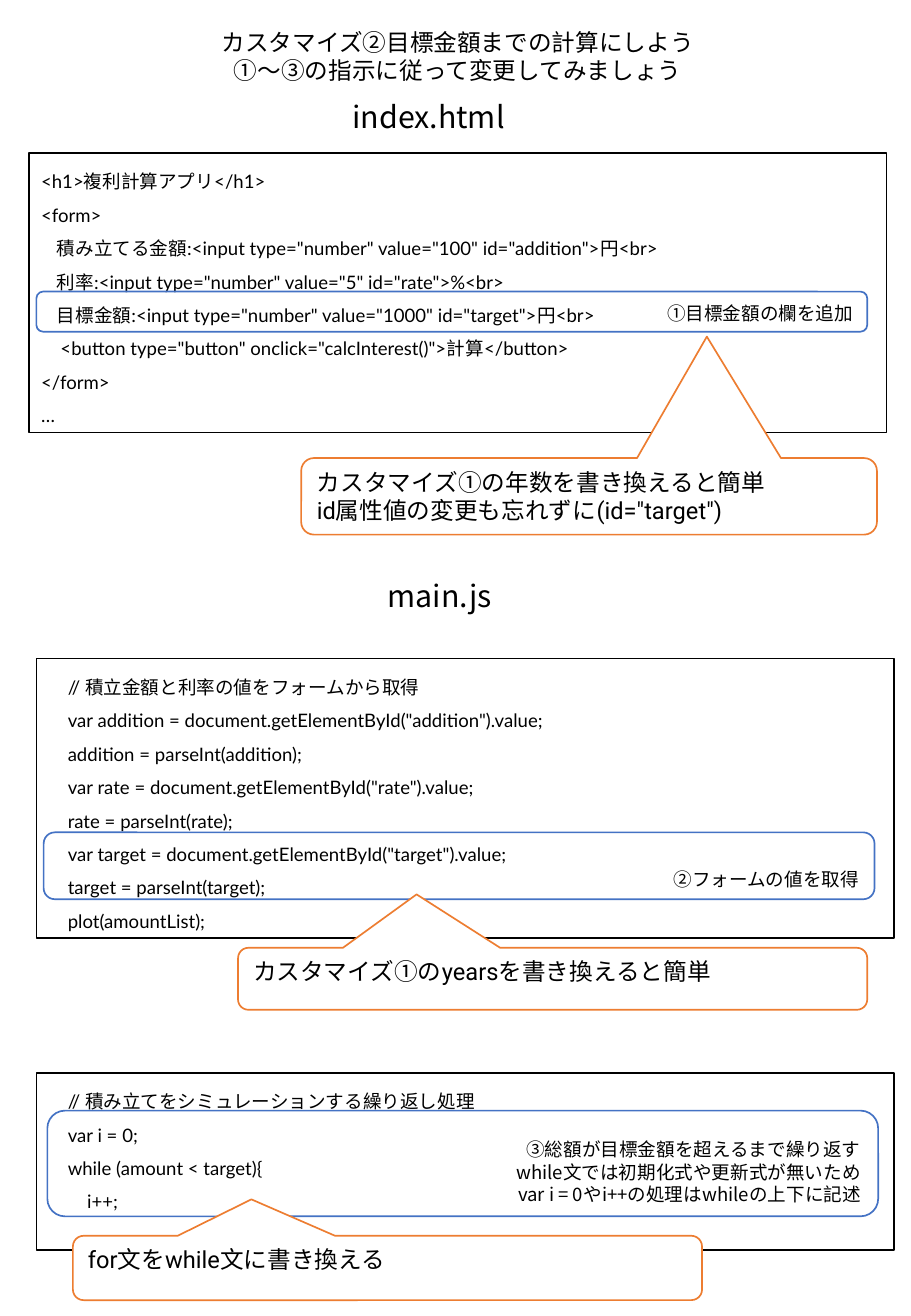
from lxml import etree
from pptx import Presentation
from pptx.dml.color import RGBColor
from pptx.enum.shapes import MSO_SHAPE
from pptx.enum.text import MSO_ANCHOR, MSO_AUTO_SIZE, PP_ALIGN
from pptx.oxml.ns import qn
from pptx.util import Pt

PX = 9144  # EMU per px, 100 px to the inch
PAGE_WIDTH, PAGE_HEIGHT = 750, 1083

BLACK = RGBColor(0x00, 0x00, 0x00)
WHITE = RGBColor(0xFF, 0xFF, 0xFF)
BLUE = RGBColor(0x44, 0x72, 0xC4)
ORANGE = RGBColor(0xED, 0x7D, 0x31)

RECTANGLE = MSO_SHAPE.RECTANGLE
ROUNDED = MSO_SHAPE.ROUNDED_RECTANGLE
CALLOUT = MSO_SHAPE.ROUNDED_RECTANGULAR_CALLOUT
TOP, BOTTOM = MSO_ANCHOR.TOP, MSO_ANCHOR.BOTTOM
LEFT, CENTER, RIGHT = PP_ALIGN.LEFT, PP_ALIGN.CENTER, PP_ALIGN.RIGHT

CODE_FONT, NOTE_FONT, JAPANESE_FONT = "Lato", "Roboto", "Noto Sans CJK JP"

# Content: places are (left, top, width, height) in px
TITLE_PLACE = (24, 18, 706, 88)
TITLE = ["カスタマイズ②目標金額までの計算にしよう", "①～③の指示に従って変更してみましょう"]

HEADINGS = [
    ((0, 76, 706, 40), "index.html"),
    ((9, 470, 706, 40), "main.js"),
]

# Each code line is (indent in px, text)
CODE_PANELS = [
    ((24, 126, 706, 230), [
        (0, "<h1>複利計算アプリ</h1>"),
        (0, "<form>"),
        (13, '積み立てる金額:<input type="number" value="100" id="addition">円<br>'),
        (13, '利率:<input type="number" value="5" id="rate">%<br>'),
        (13, '目標金額:<input type="number" value="1000" id="target">円<br>'),
        (16, '<button type="button" onclick="calcInterest()">計算</button>'),
        (0, "</form>"),
        (0, "…"),
    ]),
    ((30, 542, 706, 230), [
        (16, "// 積立金額と利率の値をフォームから取得"),
        (16, 'var addition = document.getElementById("addition").value;'),
        (16, "addition = parseInt(addition);"),
        (16, 'var rate = document.getElementById("rate").value;'),
        (16, "rate = parseInt(rate);"),
        (16, 'var target = document.getElementById("target").value;'),
        (16, "target = parseInt(target);"),
        (16, "plot(amountList);"),
    ]),
    ((30, 883, 706, 146), [
        (16, "// 積み立てをシミュレーションする繰り返し処理"),
        (16, "var i = 0;"),
        (16, "while (amount < target){"),
        (32, "i++;"),
    ]),
]

STEPS = [
    ((30, 240, 684, 33), ["①目標金額の欄を追加"]),
    ((36, 685, 684, 55), ["②フォームの値を取得"]),
    ((39, 914, 684, 87), [
        "③総額が目標金額を超えるまで繰り返す",
        "while文では初期化式や更新式が無いため",
        "var i = 0やi++の処理はwhileの上下に記述",
    ]),
]

# Each hint is (place, tip in px, lines)
HINTS = [
    ((248, 377, 474, 63), (582, 277), [
        "カスタマイズ①の年数を書き換えると簡単",
        'id属性値の変更も忘れずに(id="target")',
    ]),
    ((196, 780, 518, 51), (343, 736), ["カスタマイズ①のyearsを書き換えると簡単"]),
    ((60, 1017, 518, 53), (207, 987), ["for文をwhile文に書き換える"]),
]


def scaled(place):
    return [value * PX for value in place]


def write(box, lines, size, font, align=LEFT, anchor=TOP):
    frame = box.text_frame
    frame.text = "\n".join(lines)
    frame.word_wrap = True
    frame.auto_size = MSO_AUTO_SIZE.NONE
    frame.vertical_anchor = anchor
    for para in frame.paragraphs:
        para.alignment = align
        for span in para.runs:
            span.font.size = Pt(size)
            span.font.color.rgb = BLACK
            span.font.name = font
            east_asian = etree.SubElement(span.font._element, qn("a:ea"))
            east_asian.set("typeface", JAPANESE_FONT)


def add_box(page, kind, place, line_color, fill_color=None):
    box = page.shapes.add_shape(kind, *scaled(place))
    box.shadow.inherit = False
    box.line.color.rgb = line_color
    box.line.width = Pt(1)
    if fill_color is None:
        box.fill.background()
    else:
        box.fill.solid()
        box.fill.fore_color.rgb = fill_color
    return box


def add_code_panel(page, place, code):
    panel = add_box(page, RECTANGLE, place, BLACK, WHITE)
    write(panel, [text for _, text in code], 11, CODE_FONT)
    for para, (indent, _) in zip(panel.text_frame.paragraphs, code):
        para.line_spacing = 1.5
        para._p.get_or_add_pPr().set("marL", str(indent * PX))


def add_hint(page, place, tip, lines):
    hint = add_box(page, CALLOUT, place, ORANGE, WHITE)
    left, top, width, height = place
    # The tip is measured from the centre, as a share of the size
    hint.adjustments[0] = (tip[0] - left) / width - 0.5
    hint.adjustments[1] = (tip[1] - top) / height - 0.5
    write(hint, lines, 14, NOTE_FONT)


def main():
    deck = Presentation()
    deck.slide_width, deck.slide_height = scaled((PAGE_WIDTH, PAGE_HEIGHT))
    page = deck.slides.add_slide(deck.slide_layouts[5])

    # Title
    title = page.shapes.title
    title.left, title.top, title.width, title.height = scaled(TITLE_PLACE)
    write(title, TITLE, 14, JAPANESE_FONT, CENTER)

    # Code listings and file names
    for place, code in CODE_PANELS:
        add_code_panel(page, place, code)
    for place, name in HEADINGS:
        heading = page.shapes.add_textbox(*scaled(place))
        write(heading, [name], 18, JAPANESE_FONT, CENTER)

    # Numbered steps
    for place, lines in STEPS:
        step = add_box(page, ROUNDED, place, BLUE)
        write(step, lines, 11, JAPANESE_FONT, RIGHT, BOTTOM)

    # Hints pointing at the steps
    for place, tip, lines in HINTS:
        add_hint(page, place, tip, lines)

    deck.save("out.pptx")


if __name__ == "__main__":
    main()
